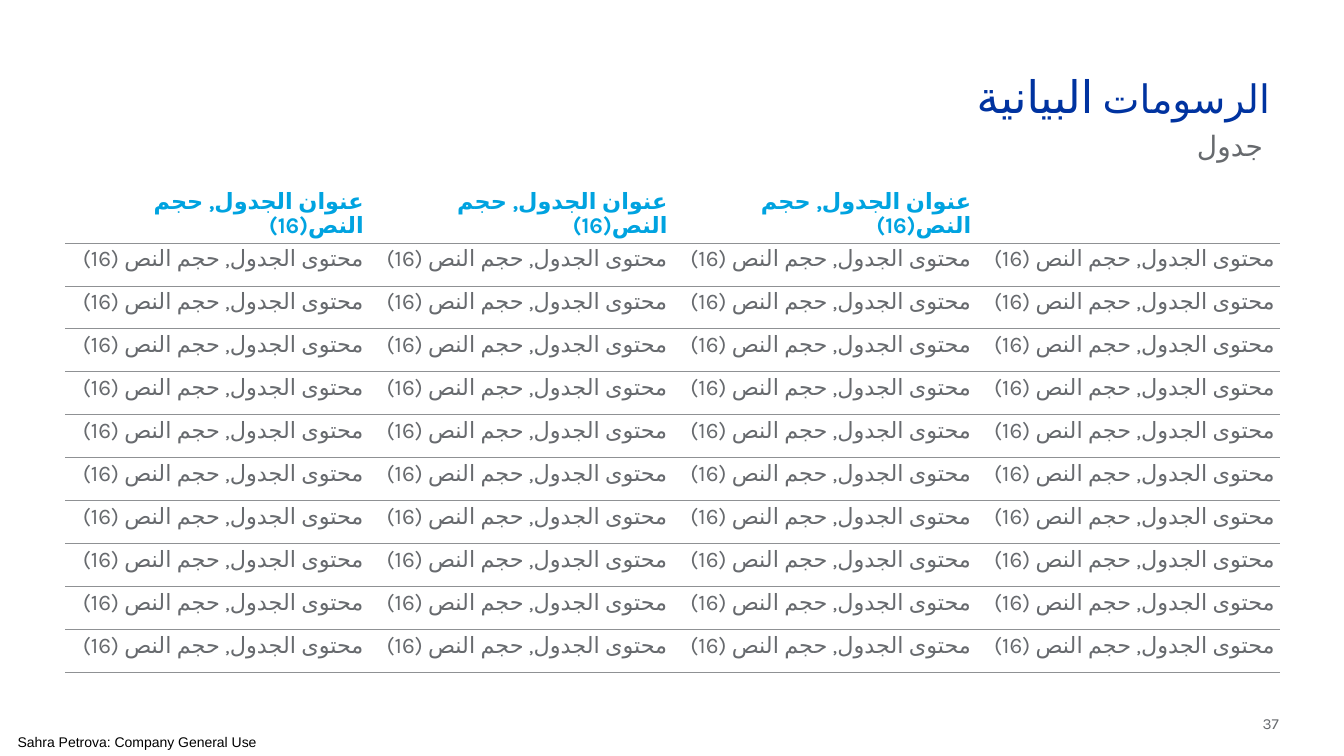
from dataclasses import dataclass

from lxml.etree import SubElement
from pptx import Presentation
from pptx.dml.color import RGBColor
from pptx.enum.text import MSO_ANCHOR as Anchor, PP_ALIGN as Align
from pptx.oxml import parse_xml
from pptx.oxml.ns import nsdecls, qn
from pptx.util import Emu, Pt

PX = 914400 / 100.8
NAVY, SKY, GREY, RULE, BLACK = "0033A0", "00A3E0", "676A6E", "8F9194", "000000"
ARABIC_FONT, ARABIC = "Karla", "ar-SA"
NO_GRID_STYLE = "{2D5ABB26-0587-4C30-8999-92F81FD0307C}"
HEADING = "عنوان الجدول, حجم النص(16)"
CONTENT = "محتوى الجدول, حجم النص (16)"
COLUMNS, BODY_ROWS = 4, 10
TABLE_WIDTH, HEADER_HEIGHT, ROW_HEIGHT, CELL_INSET = 1215, 64, 43, 5


@dataclass
class Words:
    text: str
    size: int
    color: str
    bold: bool = False
    font: str = "Arial"


@dataclass
class Label:
    box: tuple[int, int, int, int]
    words: list[Words]
    align: Align = Align.RIGHT
    anchor: Anchor = Anchor.TOP
    insets: tuple[int, int] = (0, 5)
    before: int = 0
    rtl: bool = False
    wrap: bool = True


def px(length: int) -> Emu:
    return Emu(round(length * PX))


def rgb(color: str) -> RGBColor:
    return RGBColor.from_string(color)


def write(paragraph, words: list[Words], align: Align, rtl: bool, before: int = 0) -> None:
    paragraph.alignment = align
    paragraph.space_before = Pt(before)
    if rtl:
        paragraph.line_spacing = 0.9
        paragraph._p.get_or_add_pPr().set("rtl", "1")
    for part in words:
        run = paragraph.add_run()
        run.text = part.text
        run.font.size = Pt(part.size)
        run.font.bold = part.bold
        run.font.name = part.font
        run.font.color.rgb = rgb(part.color)
        if rtl:
            properties = run._r.get_or_add_rPr()
            properties.set("lang", ARABIC)
            SubElement(properties, qn("a:cs")).set("typeface", ARABIC_FONT)


def add_label(slide, label: Label) -> None:
    frame = slide.shapes.add_textbox(*map(px, label.box)).text_frame
    frame.word_wrap = label.wrap
    frame.vertical_anchor = label.anchor
    side, end = map(px, label.insets)
    frame.margin_left = frame.margin_right = side
    frame.margin_top = frame.margin_bottom = end
    write(frame.paragraphs[0], label.words, label.align, label.rtl, label.before)


def rule_cell(cell, sides: list[str]) -> None:
    cell.fill.background()
    properties = cell._tc.get_or_add_tcPr()
    for position, side in enumerate(sides):
        properties.insert(position, parse_xml(
            f'<a:{side} {nsdecls("a")} w="9525"><a:solidFill>'
            f'<a:srgbClr val="{RULE}"/></a:solidFill></a:{side}>'))


def add_content_table(slide) -> None:
    height = HEADER_HEIGHT + BODY_ROWS * ROW_HEIGHT
    frame = slide.shapes.add_table(BODY_ROWS + 1, COLUMNS, px(65), px(179),
                                   px(TABLE_WIDTH), px(height))
    table = frame.table
    table.first_row = table.horz_banding = False
    table._tbl.tblPr.find(qn("a:tableStyleId")).text = NO_GRID_STYLE
    for row_index, row in enumerate(table.rows):
        is_header = row_index == 0
        row.height = px(HEADER_HEIGHT if is_header else ROW_HEIGHT)
        for column_index, cell in enumerate(row.cells):
            cell.margin_left = cell.margin_right = px(CELL_INSET)
            cell.margin_top = cell.margin_bottom = px(CELL_INSET)
            if not is_header and column_index == 0:
                cell.margin_left = px(0)
            cell.vertical_anchor = Anchor.BOTTOM if is_header else Anchor.TOP
            rule_cell(cell, ["lnB"] if is_header else ["lnT", "lnB"])
            # The heading above the last column stays empty
            if is_header and column_index == COLUMNS - 1:
                continue
            words = Words(HEADING, 16, SKY, True) if is_header else Words(CONTENT, 16, GREY)
            write(cell.text_frame.paragraphs[0], [words], Align.RIGHT, rtl=True)


LABELS = [
    # Page number and classification
    Label((1239, 711, 40, 25), [Words("37", 11, GREY, font="Karla")], anchor=Anchor.MIDDLE),
    Label((0, 728, 274, 27), [Words("Sahra Petrova: Company General Use", 10, BLACK)],
          Align.CENTER, Anchor.MIDDLE, (0, 0), wrap=False),
    # Title and subtitle
    Label((781, 70, 499, 57), [Words("الرسومات ", 28, NAVY), Words("البيانية", 32, NAVY)],
          insets=(10, 5), before=6, rtl=True),
    Label((764, 127, 499, 57), [Words("جدول", 20, GREY)], before=6, rtl=True),
]


def main() -> None:
    deck = Presentation()
    deck.slide_width, deck.slide_height = px(1344), px(756)
    slide = deck.slides.add_slide(deck.slide_layouts[6])
    add_content_table(slide)
    for label in LABELS:
        add_label(slide, label)
    deck.save("out.pptx")


if __name__ == "__main__":
    main()
